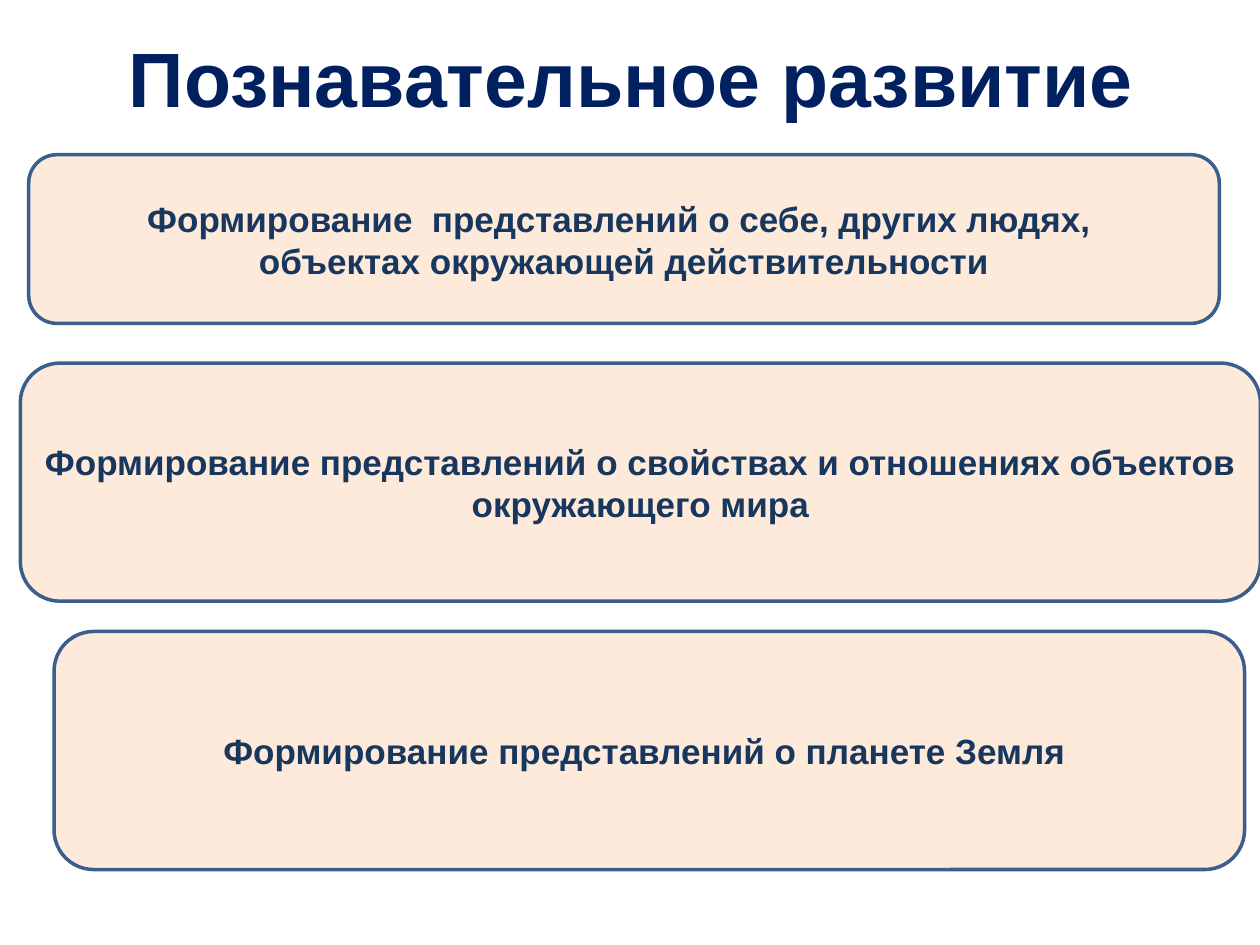
from dataclasses import dataclass

from pptx import Presentation
from pptx.dml.color import RGBColor
from pptx.enum.shapes import MSO_SHAPE
from pptx.enum.text import MSO_ANCHOR, PP_ALIGN
from pptx.util import Cm, Pt


@dataclass(frozen=True)
class Theme:
    """Colours, font and type sizes of the slide."""
    font: str = "Arial"
    title_color: RGBColor = RGBColor(0x00, 0x20, 0x60)
    text_color: RGBColor = RGBColor(0x17, 0x37, 0x5E)
    card_fill: RGBColor = RGBColor(0xFD, 0xEA, 0xDA)
    card_line: RGBColor = RGBColor(0x3A, 0x5F, 0x8C)
    title_size: Pt = Pt(44)
    text_size: Pt = Pt(20)
    line_width: Pt = Pt(2)


THEME = Theme()
TITLE = "Познавательное развитие"
TITLE_BOX = (1.3, 0.74, 22.86, 1.63)
CARDS = [
    ((0.58, 3.12, 24, 3.4), [
        "Формирование  представлений о себе, других людях, ",
        "объектах окружающей действительности",
    ]),
    ((0.41, 7.32, 25, 4.8), [
        "Формирование представлений о свойствах и отношениях объектов окружающего мира",
    ]),
    ((1.09, 12.73, 24, 4.8), ["Формирование представлений о планете Земля "]),
]


def write_lines(text_frame, lines, size, color):
    """Fill a text frame with bold centred paragraphs."""
    text_frame.word_wrap = True
    text_frame.vertical_anchor = MSO_ANCHOR.MIDDLE
    text_frame.margin_left = text_frame.margin_right = Cm(0.2)
    text_frame.text = "\n".join(lines)
    for paragraph in text_frame.paragraphs:
        paragraph.alignment = PP_ALIGN.CENTER
        paragraph.font.name = THEME.font
        paragraph.font.size = size
        paragraph.font.bold = True
        paragraph.font.color.rgb = color


def add_title(slide, box, text):
    """Place the slide heading in the given box."""
    shape = slide.shapes.add_textbox(*map(Cm, box))
    write_lines(shape.text_frame, [text], THEME.title_size, THEME.title_color)


def add_card(slide, box, lines):
    """Place a rounded card with its text in the given box."""
    shape = slide.shapes.add_shape(MSO_SHAPE.ROUNDED_RECTANGLE, *map(Cm, box))
    shape.shadow.inherit = False
    shape.fill.solid()
    shape.fill.fore_color.rgb = THEME.card_fill
    shape.line.color.rgb = THEME.card_line
    shape.line.width = THEME.line_width
    write_lines(shape.text_frame, lines, THEME.text_size, THEME.text_color)


def main():
    """Build the slide and save the presentation."""
    presentation = Presentation()
    presentation.slide_width = Cm(25.4)
    presentation.slide_height = Cm(19.05)
    slide = presentation.slides.add_slide(presentation.slide_layouts[6])
    add_title(slide, TITLE_BOX, TITLE)
    for box, lines in CARDS:
        add_card(slide, box, lines)
    presentation.save("out.pptx")


if __name__ == "__main__":
    main()
